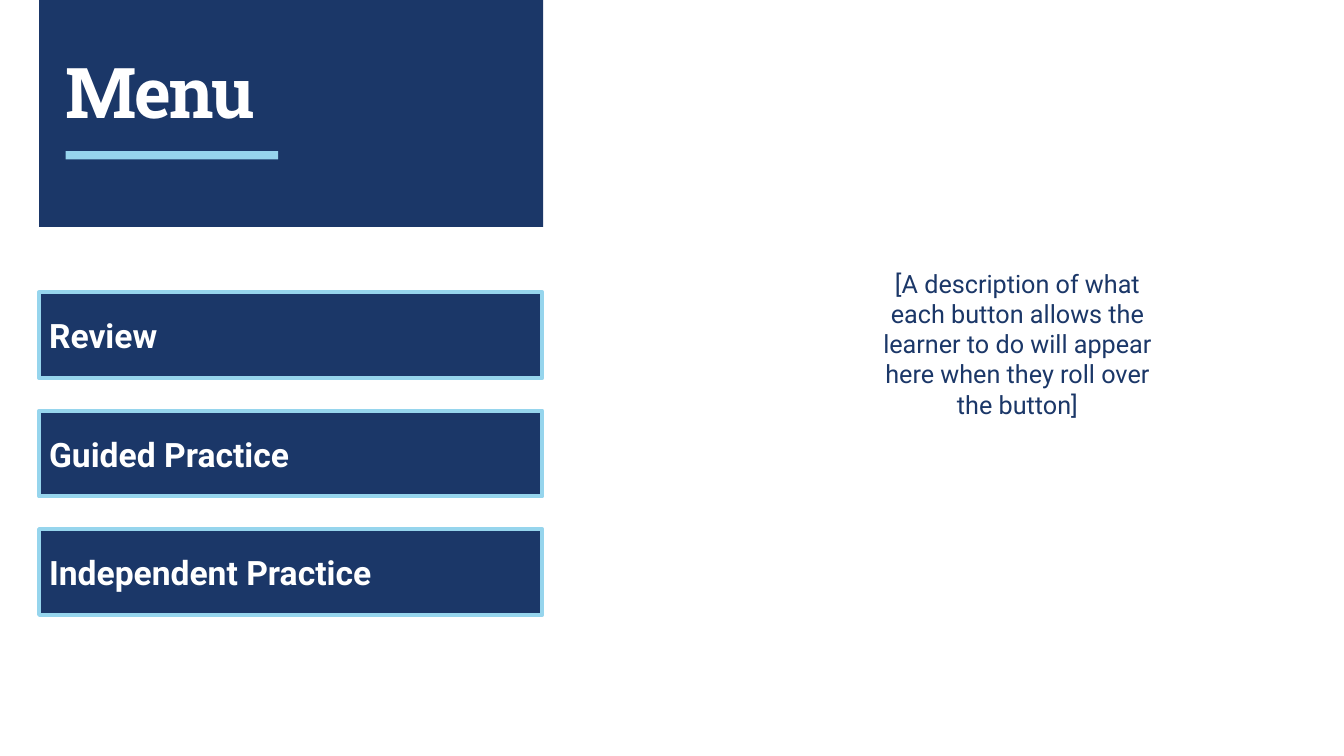
from dataclasses import dataclass

from lxml import etree
from pptx import Presentation
from pptx.enum import shapes, text
from pptx.oxml import ns
from pptx.util import Pt

COLORS = {"navy": "1B3768", "sky": "9ADAF2", "border": "96D5ED", "white": "FFFFFF"}


@dataclass
class Box:
    left: float
    top: float
    width: float
    height: float

    def lengths(self) -> list:
        return [Pt(v) for v in (self.left, self.top, self.width, self.height)]


@dataclass
class Lettering:
    font: str
    size: float
    color: str
    bold: bool = False


def paint(color_format, name: str) -> None:
    color_format.rgb = color_format_rgb(name)


def color_format_rgb(name: str):
    return RGBColor.from_string(COLORS[name])


def write(frame, words: str, style: Lettering, align, anchor):
    frame.word_wrap = True
    frame.vertical_anchor = anchor
    paragraph = frame.paragraphs[0]
    paragraph.text = words
    paragraph.alignment = align
    font = paragraph.font
    font.name, font.size, font.bold = style.font, Pt(style.size), style.bold
    paint(font.color, style.color)
    return paragraph


def add_panel(slide, box: Box):
    panel = slide.shapes.add_shape(shapes.MSO_SHAPE.RECTANGLE, *box.lengths())
    panel.shadow.inherit = False
    panel.fill.solid()
    paint(panel.fill.fore_color, "navy")
    panel.line.fill.background()
    return panel


def add_button(slide, box: Box, label: str) -> None:
    button = add_panel(slide, box)
    button.line.width = Pt(3)
    paint(button.line.color, "border")
    write(button.text_frame, label, Lettering("Roboto", 24, "white", True),
          text.PP_ALIGN.LEFT, text.MSO_ANCHOR.MIDDLE)


def add_rule(slide, start: float, end: float, y: float) -> None:
    rule = slide.shapes.add_connector(
        shapes.MSO_CONNECTOR.STRAIGHT, Pt(start), Pt(y), Pt(end), Pt(y))
    rule.line.width = Pt(6)
    paint(rule.line.color, "sky")
    properties = rule._element.spPr
    color = properties.find(".//" + ns.qn("a:srgbClr"))
    etree.SubElement(color, ns.qn("a:alpha"), val="97000")
    etree.SubElement(properties, ns.qn("a:effectLst"))


def add_title(slide, box: Box, words: str) -> None:
    frame = slide.shapes.add_textbox(*box.lengths()).text_frame
    frame.margin_left = frame.margin_bottom = 0
    title = write(frame, words, Lettering("Roboto Slab", 50, "white", True),
                  text.PP_ALIGN.LEFT, text.MSO_ANCHOR.BOTTOM)
    title.line_spacing = 0.9
    title.font._element.set("spc", "-150")


def add_description(slide, box: Box, words: str) -> None:
    frame = slide.shapes.add_textbox(*box.lengths()).text_frame
    write(frame, words, Lettering("Roboto", 18, "navy"),
          text.PP_ALIGN.CENTER, text.MSO_ANCHOR.TOP)
    frame.auto_size = text.MSO_AUTO_SIZE.SHAPE_TO_FIT_TEXT


def main() -> None:
    deck = Presentation()
    deck.slide_width, deck.slide_height = Pt(960), Pt(540)
    menu = deck.slides.add_slide(deck.slide_layouts[6])

    # Header
    add_panel(menu, Box(28, 0, 360, 162))
    add_rule(menu, 198.7, 46.8, 110.9)
    add_title(menu, Box(46.8, 15.1, 316.8, 80.6), "Menu")

    # Rollover description
    add_description(
        menu, Box(623.5, 187.9, 206.6, 116.6),
        "[A description of what each button allows the learner to do "
        "will appear here when they roll over the button]")

    # Menu buttons
    for row, label in enumerate(["Review", "Guided Practice", "Independent Practice"]):
        add_button(menu, Box(28, 208.8 + 84.6 * row, 359.3, 61.2), label)

    deck.save("out.pptx")


from pptx.dml.color import RGBColor

if __name__ == "__main__":
    main()
